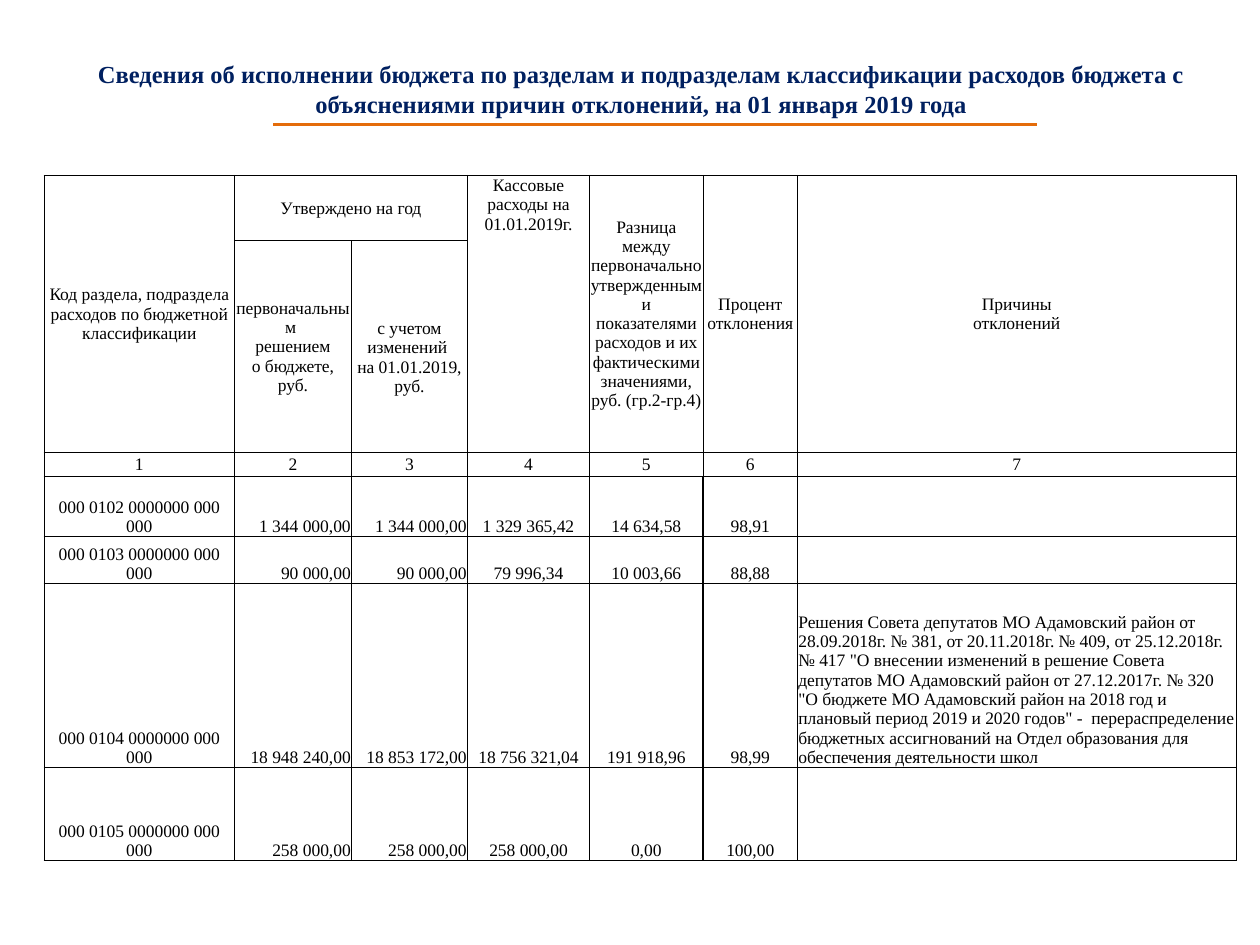
from lxml import etree
from pptx import Presentation
from pptx import util as u
from pptx.dml.color import RGBColor
from pptx.enum import shapes, text
from pptx.oxml.ns import qn

COLORS = {"title": "002060", "ink": "000000", "rule": "E46C0A"}
FONT = "Times New Roman"
TITLE = ("Сведения об исполнении бюджета по разделам и подразделам классификации "
         "расходов бюджета с объяснениями причин отклонений, на 01 января 2019 года")
REASON = ("Решения Совета депутатов МО Адамовский район от 28.09.2018г. № 381, "
          "от 20.11.2018г. № 409, от 25.12.2018г. № 417 \"О внесении изменений в решение "
          "Совета депутатов МО Адамовский район от 27.12.2017г. № 320 \"О бюджете МО "
          "Адамовский район на 2018 год и плановый период 2019 и 2020 годов\" -  "
          "перераспределение бюджетных ассигнований на Отдел образования для "
          "обеспечения деятельности школ")
ROWS = [
    ["Код раздела, подраздела расходов по бюджетной классификации", "Утверждено на год", "",
     "Кассовые расходы на 01.01.2019г.",
     "Разница между первоначально утвержденными показателями расходов и их "
     "фактическими значениями, руб. (гр.2-гр.4)",
     "Процент отклонения", "Причины\nотклонений"],
    ["", "первоначальным \nрешением\nо бюджете, руб.",
     "\nс учетом изменений \nна 01.01.2019, руб.", "", "", "", ""],
    ["1", "2", "3", "4", "5", "6", "7"],
    ["000 0102 0000000 000 000", "1 344 000,00", "1 344 000,00", "1 329 365,42",
     "14 634,58", "98,91", ""],
    ["000 0103 0000000 000 000", "90 000,00", "90 000,00", "79 996,34",
     "10 003,66", "88,88", ""],
    ["000 0104 0000000 000 000", "18 948 240,00", "18 853 172,00", "18 756 321,04",
     "191 918,96", "98,99", REASON],
    ["000 0105 0000000 000 000", "258 000,00", "258 000,00", "258 000,00",
     "0,00", "100,00", ""],
]
WIDTHS = [1.51, 0.93, 0.92, 0.97, 0.9, 0.75, 3.48]
HEIGHTS = [0.52, 1.68, 0.19, 0.48, 0.37, 1.46, 0.74]
MERGES = [((0, 1), (0, 2))] + [((0, col), (1, col)) for col in (0, 3, 4, 5, 6)]
FIRST_DATA = 3
CASH_COL = 3
MARGINS = {"margin_left": 0.5, "margin_right": 0.5, "margin_top": 0.5, "margin_bottom": 0}
DATA_ALIGN = [text.PP_ALIGN.CENTER, text.PP_ALIGN.RIGHT, text.PP_ALIGN.RIGHT,
              text.PP_ALIGN.CENTER, text.PP_ALIGN.CENTER, text.PP_ALIGN.CENTER,
              text.PP_ALIGN.LEFT]


def write(para, words, size, color, align, bold=False):
    para.text = words
    para.alignment = align
    for span in para.runs:
        for name, value in {"name": FONT, "size": u.Pt(size), "bold": bold}.items():
            setattr(span.font, name, value)
        span.font.color.rgb = RGBColor.from_string(COLORS[color])
    # Line breaks and empty paragraphs need the text size too
    for line_break in para._p.findall(qn("a:br")):
        etree.SubElement(line_break, qn("a:rPr")).set("sz", str(size * 100))
    if not words:
        etree.SubElement(para._p, qn("a:endParaRPr")).set("sz", str(size * 100))


def draw_borders(cell, points):
    props = cell._tc.get_or_add_tcPr()
    for index, side in enumerate("LRTB"):
        line = etree.Element(qn(f"a:ln{side}"), w=str(u.Pt(points.get(side, 0.5))))
        fill = etree.SubElement(line, qn("a:solidFill"))
        etree.SubElement(fill, qn("a:srgbClr"), val=COLORS["ink"])
        props.insert(index, line)


def heavy_sides(row, col):
    if row < FIRST_DATA:
        return {}
    sides = {4: "R", 5: "L"}.get(col, "")
    if row == FIRST_DATA:
        sides += {5: "R", 6: "L"}.get(col, "")
    return dict.fromkeys(sides, 1)


def fill_cell(cell, row, col, words):
    is_data = row >= FIRST_DATA
    for name, value in MARGINS.items():
        setattr(cell, name, u.Pt(value))
    if is_data:
        cell.vertical_anchor = text.MSO_ANCHOR.BOTTOM
    elif row == 0 and col == CASH_COL:
        cell.vertical_anchor = text.MSO_ANCHOR.TOP
    else:
        cell.vertical_anchor = text.MSO_ANCHOR.MIDDLE
    align = DATA_ALIGN[col] if is_data else text.PP_ALIGN.CENTER
    write(cell.text_frame.paragraphs[0], words, 10, "ink", align)
    cell.fill.background()
    draw_borders(cell, heavy_sides(row, col))


def main():
    deck = Presentation()
    deck.slide_width, deck.slide_height = u.Inches(10), u.Inches(7.5)
    page = deck.slides.add_slide(deck.slide_layouts[5])

    # Title
    title = page.shapes.title
    for name, value in {"left": 0.59, "top": 0.36, "width": 9, "height": 0.69}.items():
        setattr(title, name, u.Inches(value))
    title.text_frame.vertical_anchor = text.MSO_ANCHOR.MIDDLE
    write(title.text_frame.paragraphs[0], TITLE, 14, "title", text.PP_ALIGN.CENTER, True)

    # Budget table
    frame = page.shapes.add_table(len(ROWS), len(WIDTHS), u.Inches(0.35), u.Inches(1.39),
                                  u.Inches(sum(WIDTHS)), u.Inches(sum(HEIGHTS)))
    table = frame.table
    table.first_row = table.horz_banding = False
    for column, width in zip(table.columns, WIDTHS):
        column.width = u.Inches(width)
    for line, height in zip(table.rows, HEIGHTS):
        line.height = u.Inches(height)
    for row, values in enumerate(ROWS):
        for col, words in enumerate(values):
            fill_cell(table.cell(row, col), row, col, words)
    for start, end in MERGES:
        table.cell(*start).merge(table.cell(*end))

    # Rule under the title
    rule = page.shapes.add_connector(shapes.MSO_CONNECTOR.STRAIGHT, u.Inches(2.17),
                                     u.Inches(0.99), u.Inches(8.23), u.Inches(0.99))
    rule.line.color.rgb = RGBColor.from_string(COLORS["rule"])
    rule.line.width = u.Pt(1.5)
    etree.SubElement(rule._element.spPr, qn("a:effectLst"))

    deck.save("out.pptx")


if __name__ == "__main__":
    main()
